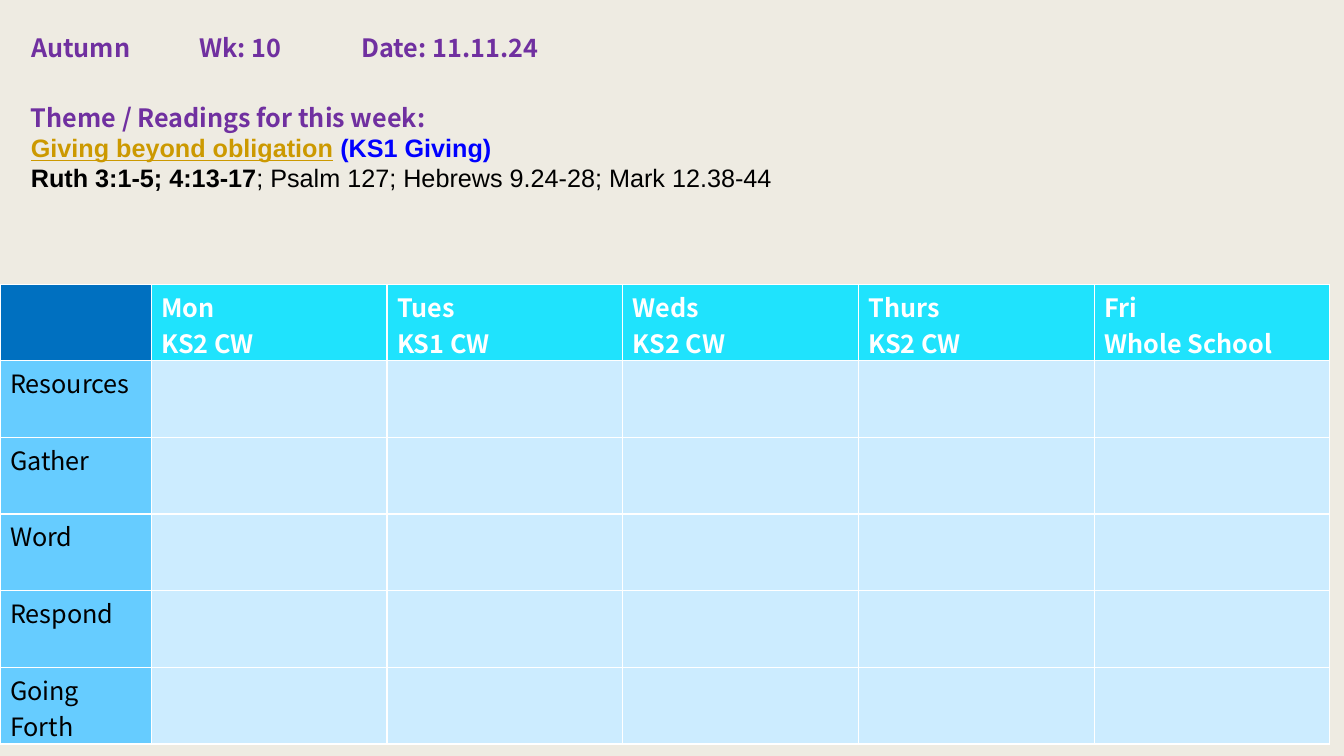
from pptx import Presentation
from pptx.dml.color import RGBColor
from pptx.enum.text import MSO_ANCHOR, MSO_AUTO_SIZE, PP_ALIGN
from pptx.oxml.xmlchemy import OxmlElement
from pptx.util import Pt

HUES = {
    "page": "EEEBE2", "purple": "7030A0", "gold": "CC9900", "blue": "0000FF",
    "black": "000000", "white": "FFFFFF", "corner": "0070C0",
    "head": "1FE3FD", "side": "66CCFF", "body": "CCECFF",
}
SANS = "Noto Sans CJK JP"
DAYS = ["Mon\nKS2 CW", "Tues\nKS1 CW", "Weds\nKS2 CW", "Thurs\nKS2 CW",
        "Fri\nWhole School"]
STEPS = ["Resources", "Gather", "Word", "Respond", "Going Forth"]


def hue(name):
    return RGBColor.from_string(HUES[name])


def style(font, color, bold, face=SANS):
    font.name = face
    font.size = Pt(18)
    font.bold = bold
    font.color.rgb = hue(color)


def set_frame(frame):
    frame.word_wrap = True
    frame.auto_size = MSO_AUTO_SIZE.NONE
    frame.vertical_anchor = MSO_ANCHOR.TOP
    frame.margin_top = 0


def add_tabs(para, stops):
    tabs = OxmlElement("a:tabLst")
    for stop in stops:
        tab = OxmlElement("a:tab")
        tab.set("pos", str(Pt(stop)))
        tab.set("algn", "l")
        tabs.append(tab)
    para._p.get_or_add_pPr().append(tabs)


def add_term(slide, left, top, width, height):
    title = slide.shapes.title
    title.left, title.top = Pt(left), Pt(top)
    title.width, title.height = Pt(width), Pt(height)
    set_frame(title.text_frame)
    para = title.text_frame.paragraphs[0]
    para.text = "Autumn\tWk: 10\tDate: 11.11.24"
    para.alignment = PP_ALIGN.LEFT
    add_tabs(para, [120, 236])
    style(para.font, "purple", True)


def add_theme(slide, left, top, width, height):
    box = slide.shapes.add_textbox(Pt(left), Pt(top), Pt(width), Pt(height))
    frame = box.text_frame
    set_frame(frame)
    lead = frame.paragraphs[0]
    lead.text = "Theme / Readings for this week:"
    style(lead.font, "purple", True)

    para = frame.add_paragraph()
    style(para.font, "black", False, "Arial")
    parts = [
        ("Giving beyond obligation", "gold", True),
        (" (KS1 Giving)", "blue", True),
        ("Ruth 3:1-5; 4:13-17", "black", True),
        ("; Psalm 127; Hebrews 9.24-28; Mark 12.38-44", "black", False),
    ]
    for text, color, bold in parts:
        run = para.add_run()
        run.text = text
        run.font.bold = bold
        run.font.color.rgb = hue(color)
        run.font.underline = color == "gold"
        if color == "blue":
            para.add_line_break()


def fill_cell(cell, text, fill, color, bold):
    cell.fill.solid()
    cell.fill.fore_color.rgb = hue(fill)
    cell.margin_top = Pt(2.6)
    cell.margin_bottom = 0
    cell.text = text
    for para in cell.text_frame.paragraphs:
        style(para.font, color, bold)


def add_plan(slide, left, top, width, height):
    rows = [[""] + DAYS] + [[step] + [""] * len(DAYS) for step in STEPS]
    side = 108
    frame = slide.shapes.add_table(len(rows), len(rows[0]), Pt(left), Pt(top),
                                   Pt(width), Pt(height))
    table = frame.table
    table.horz_banding = False
    for col, column in enumerate(table.columns):
        column.width = Pt((width - side) / len(DAYS) if col else side)
    for row, texts in enumerate(rows):
        table.rows[row].height = Pt(height / len(rows))
        for col, text in enumerate(texts):
            if row == 0:
                fill = "head" if col else "corner"
            else:
                fill = "body" if col else "side"
            color = "black" if row else "white"
            fill_cell(table.cell(row, col), text, fill, color, row == 0)


def main():
    deck = Presentation()
    deck.slide_width, deck.slide_height = Pt(960), Pt(540)
    slide = deck.slides.add_slide(deck.slide_layouts[5])
    slide.background.fill.solid()
    slide.background.fill.fore_color.rgb = hue("page")
    add_term(slide, 15, 23, 935, 29)
    add_theme(slide, 15, 73, 877, 94)
    add_plan(slide, 0, 203, 950, 328.5)
    deck.save("out.pptx")


if __name__ == "__main__":
    main()
